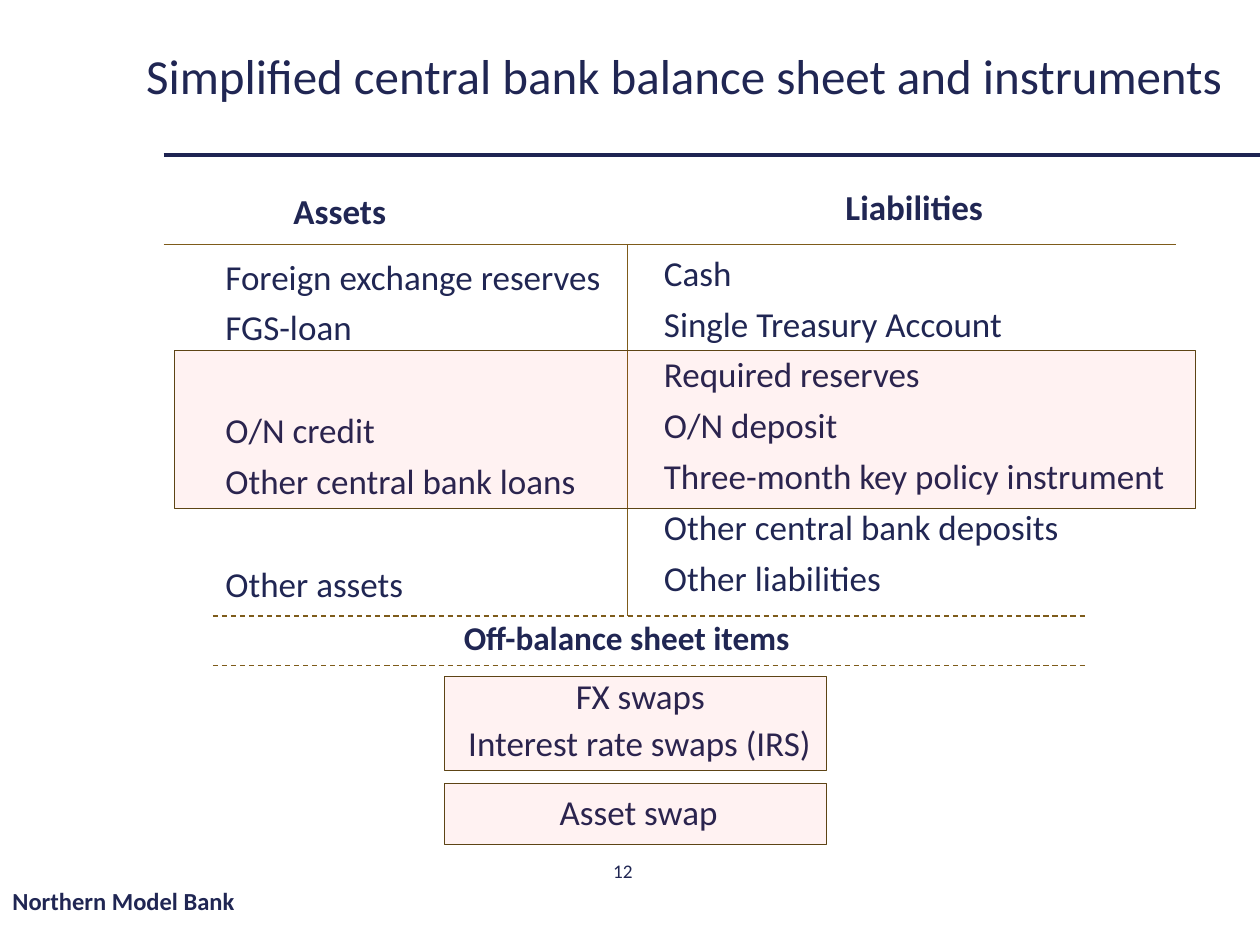
"""Build a slide with a simplified central bank balance sheet and its instruments."""
from lxml import etree
from pptx import Presentation, util as u
from pptx.dml import color
from pptx.enum import dml, shapes, text
from pptx.oxml import ns

NAVY, RULE, BROWN, OUTLINE, PINK = "202653", "1E2452", "7E5B1A", "5D4415", "FF0000"
LEFT, CENTER = text.PP_ALIGN.LEFT, text.PP_ALIGN.CENTER
TOP, MIDDLE = text.MSO_ANCHOR.TOP, text.MSO_ANCHOR.MIDDLE
GAP, SKIPPED_ROW = 7.5, 29.5

TITLE = "Simplified central bank balance sheet and instruments"
ASSETS = ["Foreign exchange reserves", "FGS-loan", "", "O/N credit",
          "Other central bank loans", "", "Other assets"]
LIABILITIES = ["Cash", "Single Treasury Account", "Required reserves", "O/N deposit",
               "Three-month key policy instrument", "Other central bank deposits",
               "Other liabilities"]

PLACEHOLDERS = [
    ([TITLE], (2.69, 0.53, 22.71, 2.11), dict(size=28, anchor=MIDDLE)),
    (["Assets"], (5.66, 3.86, 3, 0.99), dict(bold=True, spacing=0.8)),
    (ASSETS, (4.29, 5.11, 8.26, 6.15), {}),
    (["Liabilities"], (16.79, 3.78, 3.51, 0.99), dict(bold=True, spacing=0.8)),
    (LIABILITIES, (13.13, 5.03, 10.97, 6.6), {}),
]
LABELS = [
    (["Northern Model Bank"], (0, 17.65, 8.59, 1.02),
     dict(size=14, bold=True, spacing=1, anchor=MIDDLE)),
    (["12"], (9.7, 17.04, 5.72, 1.02),
     dict(size=11, spacing=1, anchor=MIDDLE, aligns=[CENTER])),
    (["Off-balance sheet items"], (7.34, 12.42, 10.59, 0.99),
     dict(size=19, bold=True, aligns=[CENTER])),
    (["FX swaps", "Interest rate swaps (IRS)"], (9.19, 13.64, 7.44, 2.03),
     dict(spacing=0.8, aligns=[CENTER, LEFT])),
    (["Asset swap"], (9.55, 15.9, 6.65, 1.02), dict(aligns=[CENTER])),
]
LINES = [
    ((3.3, 3.12, 25.4, 3.12), RULE, 2.25, False),
    ((12.65, 4.93, 12.65, 12.42), BROWN, 0.75, False),
    ((3.3, 4.93, 23.7, 4.93), BROWN, 0.75, False),
    ((4.29, 12.42, 21.89, 12.42), BROWN, 0.75, True),
    ((4.29, 13.41, 21.89, 13.41), BROWN, 0.75, True),
]
HIGHLIGHTS = [(3.51, 7.06, 20.6, 3.2), (8.97, 13.64, 7.7, 1.9), (8.97, 15.8, 7.7, 1.22)]


def rgb(code):
    """Turn a hex string into a colour."""
    return color.RGBColor.from_string(code)


def lengths(box):
    """Turn centimetre numbers into lengths."""
    return [u.Cm(value) for value in box]


def write(holder, rows, size=20, bold=False, spacing=0.9, anchor=TOP, aligns=(LEFT,)):
    """Fill a text holder, turning each empty row into space before the next one."""
    frame = holder.text_frame
    frame.text = "\n".join(row for row in rows if row)
    frame.word_wrap, frame.auto_size = True, text.MSO_AUTO_SIZE.NONE
    frame.vertical_anchor = anchor
    befores, before = [], 0
    for row in rows:
        if row:
            befores.append(before)
            before = GAP
        else:
            before += SKIPPED_ROW
    for index, (line, before) in enumerate(zip(frame.paragraphs, befores)):
        properties = line._p.get_or_add_pPr()
        properties.set("marL", "0")
        properties.set("indent", "0")
        etree.SubElement(properties, ns.qn("a:buNone"))
        line.alignment = aligns[index % len(aligns)]
        line.line_spacing, line.space_before = spacing, u.Pt(before)
        font = line.runs[0].font
        font.name, font.size, font.bold = "Calibri", u.Pt(size), bold
        font.color.rgb = rgb(NAVY)


def draw_line(slide, ends, code, width, dashed):
    """Draw a straight line without a shadow."""
    line = slide.shapes.add_connector(shapes.MSO_CONNECTOR.STRAIGHT, *lengths(ends))
    line.line.color.rgb, line.line.width = rgb(code), u.Pt(width)
    if dashed:
        line.line.dash_style = dml.MSO_LINE.DASH
    etree.SubElement(line._element.spPr, ns.qn("a:effectLst"))


def highlight(slide, box):
    """Draw a nearly transparent outlined rectangle."""
    area = slide.shapes.add_shape(shapes.MSO_SHAPE.RECTANGLE, *lengths(box))
    area.shadow.inherit = False
    area.fill.solid()
    area.fill.fore_color.rgb = rgb(PINK)
    tint = area._element.spPr.find(ns.qn("a:solidFill"))[0]
    etree.SubElement(tint, ns.qn("a:alpha"), val="5000")
    area.line.color.rgb, area.line.width = rgb(OUTLINE), u.Pt(0.5)


def main():
    """Assemble and save the slide."""
    deck = Presentation()
    deck.slide_width, deck.slide_height = u.Cm(25.4), u.Cm(19.05)
    slide = deck.slides.add_slide(deck.slide_layouts.get_by_name("Comparison"))
    for holder, (rows, box, style) in zip(slide.placeholders, PLACEHOLDERS):
        holder.left, holder.top, holder.width, holder.height = lengths(box)
        write(holder, rows, **style)
    for rows, box, style in LABELS:
        write(slide.shapes.add_textbox(*lengths(box)), rows, **style)
    for line in LINES:
        draw_line(slide, *line)
    for box in HIGHLIGHTS:
        highlight(slide, box)
    deck.save("out.pptx")


if __name__ == "__main__":
    main()
